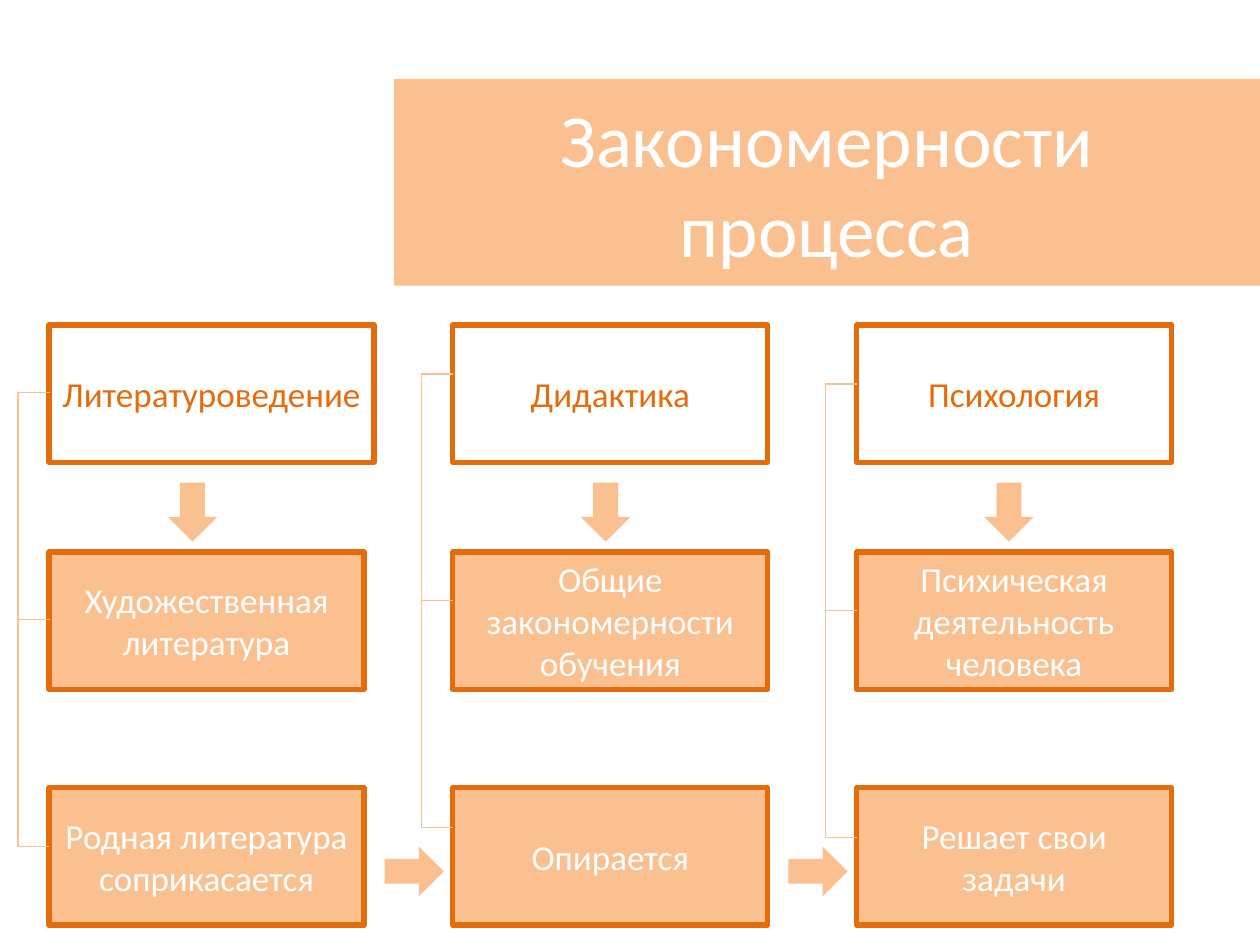
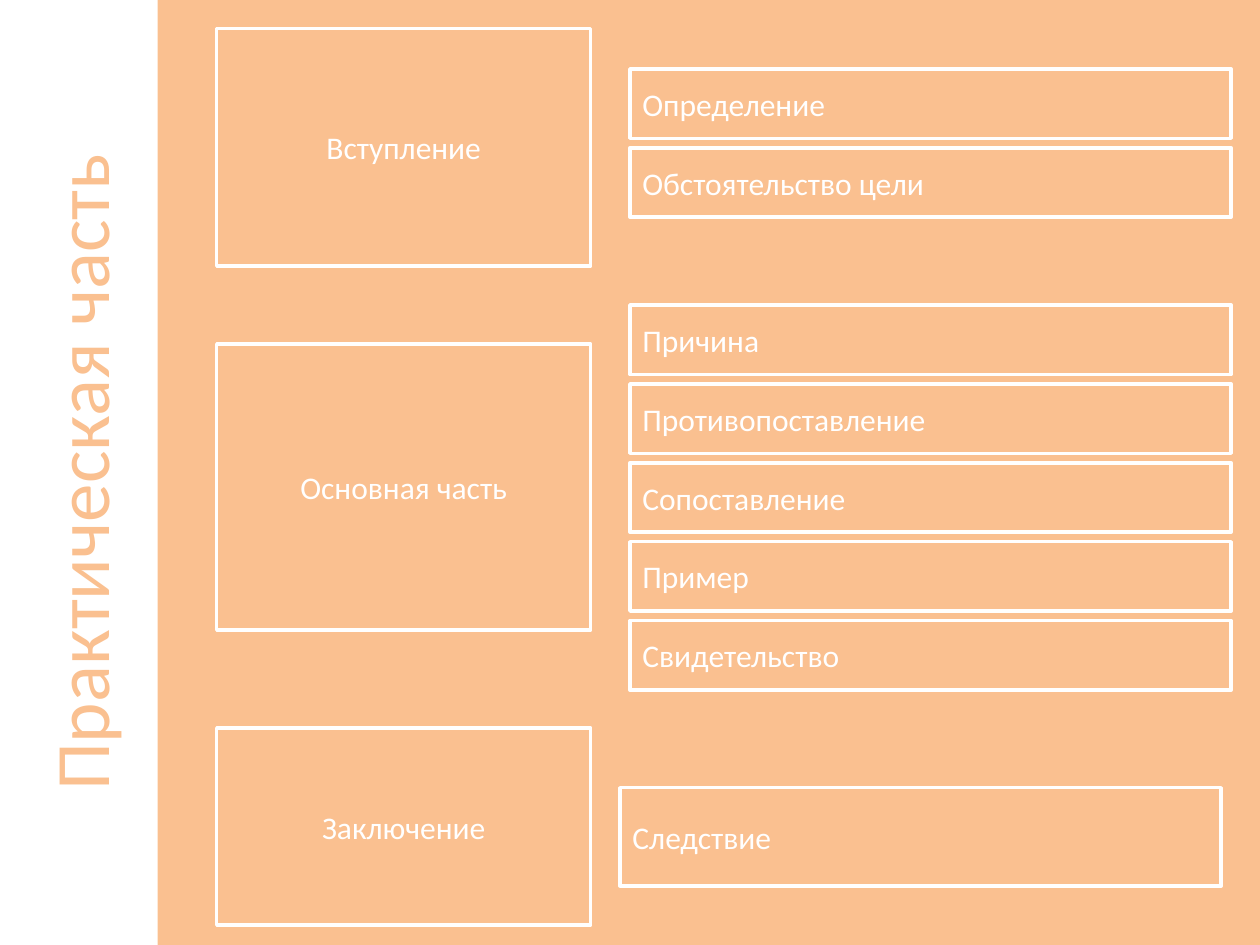
from dataclasses import dataclass

import pptx
import pptx.dml.color
import pptx.enum.shapes
import pptx.enum.text
import pptx.oxml
import pptx.oxml.ns
import pptx.util

Cm = pptx.util.Cm
Pt = pptx.util.Pt
RGB = pptx.dml.color.RGBColor
SHAPE = pptx.enum.shapes.MSO_SHAPE
ALIGN = pptx.enum.text.PP_ALIGN


@dataclass(frozen=True)
class Theme:
    peach: RGB = RGB(0xFA, 0xC0, 0x90)
    orange: RGB = RGB(0xE4, 0x6C, 0x0A)
    white: RGB = RGB(0xFF, 0xFF, 0xFF)
    font: str = "Calibri"
    banner: float = 42.9
    title: float = 44
    box: float = 20
    item: float = 18


@dataclass(frozen=True)
class Style:
    fill: RGB
    line: RGB
    width: float
    color: RGB
    size: float
    align: ALIGN = ALIGN.CENTER


@dataclass(frozen=True)
class Column:
    """One discipline: boxes from top to bottom, arrow and bracket places."""
    texts: tuple[str, str, str]
    head_w: float
    arrow_x: float
    bracket_y: float


@dataclass(frozen=True)
class Part:
    """One part of the work with the list of items beside it."""
    name: str
    top: float
    height: float
    items: tuple[str, ...]
    item_x: float
    item_top: float
    item_h: float


T = Theme()
HEAD = Style(T.white, T.orange, 3, T.orange, T.box)
BODY = Style(T.peach, T.orange, 3, T.white, T.box)
PART = Style(T.peach, T.white, 2, T.white, T.item)
ITEM = Style(T.peach, T.white, 2, T.white, T.item, ALIGN.LEFT)

SLIDE_W, SLIDE_H = 25.4, 19.05

# Scheme grid, in centimetres
COL_X, COL_STEP = 0.99, 8.14
ROW_TOPS = (6.55, 11.13, 15.88)
BOX_W, BOX_H = 6.35, 2.77
ARROW_W, ARROW_H = 1.0, 1.19
BRACKET_STEP, BRACKET_OUT, BRACKET_W = 4.57, 0.64, 0.01

COLUMNS = (
    Column(("Литературоведение", "Художественная\nлитература",
            "Родная литература соприкасается"), 6.55, 3.38, 7.92),
    Column(("Дидактика", "Общие закономерности обучения", "Опирается"),
           BOX_W, 11.71, 7.54),
    Column(("Психология", "Психическая деятельность человека",
            "Решает свои задачи"), BOX_W, 19.84, 7.74),
)

PART_X, PART_W = 4.37, 7.54
ITEM_W, ITEM_STEP = 12.12, 1.59
PARTS = (
    Part("Вступление", 0.58, 4.78, ("Определение", "Обстоятельство цели"),
         12.7, 1.39, 1.4),
    Part("Основная часть", 6.94, 5.76,
         ("Причина", "Противопоставление", "Сопоставление", "Пример", "Свидетельство"),
         12.7, 6.15, 1.4),
    Part("Заключение", 14.68, 3.97, ("Следствие",), 12.5, 15.88, 1.98),
)


def write(sp, text: str, size: float, color: RGB, align: ALIGN) -> None:
    tf = sp.text_frame
    tf.word_wrap = True
    tf.auto_size = pptx.enum.text.MSO_AUTO_SIZE.NONE
    tf.vertical_anchor = pptx.enum.text.MSO_ANCHOR.MIDDLE
    tf.text = text
    for p in tf.paragraphs:
        p.alignment = align
        p.font.name = T.font
        p.font.size = Pt(size)
        p.font.color.rgb = color


def add_solid(s, kind: SHAPE, x: float, y: float, w: float, h: float, fill: RGB):
    sp = s.shapes.add_shape(kind, Cm(x), Cm(y), Cm(w), Cm(h))
    sp.shadow.inherit = False
    sp.fill.solid()
    sp.fill.fore_color.rgb = fill
    sp.line.fill.background()
    return sp


def add_box(s, text: str, x: float, y: float, w: float, h: float, style: Style) -> None:
    sp = add_solid(s, SHAPE.RECTANGLE, x, y, w, h, style.fill)
    sp.line.color.rgb = style.line
    sp.line.width = Pt(style.width)
    write(sp, text, style.size, style.color, style.align)


def add_arrow(s, x: float, y: float, rotation: float = 0) -> None:
    sp = add_solid(s, SHAPE.DOWN_ARROW, x, y, ARROW_W, ARROW_H, T.peach)
    sp.rotation = rotation


def add_bracket(s, x: float, y: float) -> None:
    """Elbow line that leaves the column edge to the left and returns lower."""
    c = s.shapes.add_connector(pptx.enum.shapes.MSO_CONNECTOR.ELBOW, Cm(x), Cm(y),
                               Cm(x + BRACKET_W), Cm(y + BRACKET_STEP))
    c.line.color.rgb = T.peach
    c.line.width = Pt(0.75)
    sp_pr = c._element.spPr
    qn = pptx.oxml.ns.qn
    xfrm = sp_pr.find(qn("a:xfrm"))
    xfrm.set("rot", "10800000")
    xfrm.set("flipV", "1")
    guides = sp_pr.find(qn("a:prstGeom")).get_or_add_avLst()
    guide = pptx.oxml.parse_xml(f'<a:gd {pptx.oxml.ns.nsdecls("a")} name="adj1"/>')
    guide.set("fmla", f"val {round(BRACKET_OUT / BRACKET_W * 100000)}")
    guides.append(guide)
    sp_pr.append(pptx.oxml.parse_xml(f'<a:effectLst {pptx.oxml.ns.nsdecls("a")}/>'))


def set_title(s, text: str, x: float, y: float, w: float, h: float,
              fill: RGB, color: RGB, size: float):
    sp = s.shapes.title
    sp.left, sp.top, sp.width, sp.height = Cm(x), Cm(y), Cm(w), Cm(h)
    sp.fill.solid()
    sp.fill.fore_color.rgb = fill
    write(sp, text, size, color, ALIGN.CENTER)
    return sp


def build_scheme(s) -> None:
    banner = set_title(s, "Закономерности процесса", 7.94, 1.59, SLIDE_W - 7.94, 4.17,
                       T.peach, T.white, T.banner)
    banner.text_frame.margin_left = banner.text_frame.margin_right = Cm(1)

    for i, col in enumerate(COLUMNS):
        x = COL_X + i * COL_STEP
        # Boxes, heading first
        for row, (text, top) in enumerate(zip(col.texts, ROW_TOPS)):
            w, style = (BOX_W, BODY) if row else (col.head_w, HEAD)
            add_box(s, text, x, top, w, BOX_H, style)
        # Arrows down and to the next column
        add_arrow(s, col.arrow_x, 9.73)
        if i < len(COLUMNS) - 1:
            add_arrow(s, 7.85 + i * COL_STEP, 16.97, 270)
        # Side brackets
        for step in range(2):
            add_bracket(s, x, col.bracket_y + step * BRACKET_STEP)


def build_practice(s) -> None:
    s.background.fill.solid()
    s.background.fill.fore_color.rgb = T.peach

    # Vertical title band along the left edge
    band = 3.18
    offset = (SLIDE_H - band) / 2
    title = set_title(s, "Практическая часть", -offset, offset, SLIDE_H, band,
                      T.white, T.peach, T.title)
    title.rotation = 270

    for part in PARTS:
        add_box(s, part.name, PART_X, part.top, PART_W, part.height, PART)
        for i, item in enumerate(part.items):
            add_box(s, item, part.item_x, part.item_top + i * ITEM_STEP,
                    ITEM_W, part.item_h, ITEM)


def main() -> None:
    prs = pptx.Presentation()
    prs.slide_width, prs.slide_height = Cm(SLIDE_W), Cm(SLIDE_H)
    for build in (build_scheme, build_practice):
        build(prs.slides.add_slide(prs.slide_layouts[5]))
    prs.save("out.pptx")


if __name__ == "__main__":
    main()
